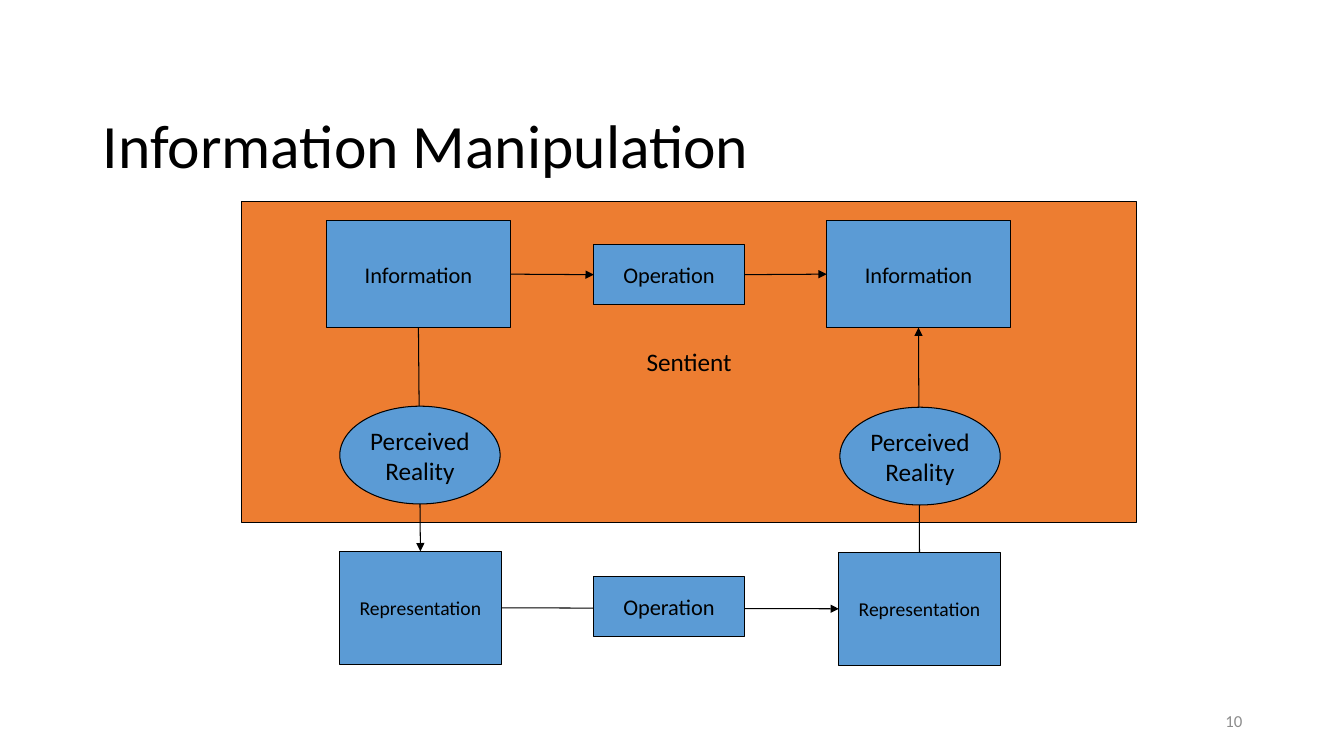
from lxml.etree import SubElement
from pptx import Presentation
from pptx.dml.color import RGBColor
from pptx.enum.shapes import MSO_CONNECTOR, MSO_SHAPE
from pptx.enum.text import MSO_ANCHOR, PP_ALIGN
from pptx.oxml.ns import qn
from pptx.util import Pt

PX = 9144  # 100 px to the inch
SLIDE_SIZE = (1333, 750)
FONT = "Calibri"
COLORS = {"panel": "ED7D31", "node": "5B9BD5", "ink": "000000", "number": "8C8C8C"}
TOP, BOTTOM, LEFT, RIGHT = 0, 2, 1, 3

TITLE = ("Information Manipulation", (92, 40, 1150, 145))
PAGE_NUMBER = ("10", (942, 695, 300, 40))

# kind: (preset, lines, font size, width, height, fill)
KINDS = {
    "sentient": (MSO_SHAPE.RECTANGLE, ["Sentient"], 18, 887, 318, "panel"),
    "information": (MSO_SHAPE.RECTANGLE, ["Information"], 16, 182, 106, "node"),
    "representation": (MSO_SHAPE.RECTANGLE, ["Representation"], 14, 160, 112, "node"),
    "reality": (MSO_SHAPE.OVAL, ["Perceived", "Reality"], 18, 159, 97, "node"),
    "operation": (MSO_SHAPE.RECTANGLE, ["Operation"], 16, 149, 59, "node"),
}

# name: (kind, left, top)
BACK_NODES = {
    "sentient": ("sentient", 240, 200),
    "representation in": ("representation", 337, 547),
    "information in": ("information", 324, 219),
    "representation out": ("representation", 832, 548),
    "information out": ("information", 820, 219),
}
FRONT_NODES = {
    "reality in": ("reality", 337, 403),
    "reality out": ("reality", 833, 404),
    "outer operation": ("operation", 589, 572),
    "inner operation": ("operation", 589, 243),
}

# (from node, side, to node, side); the long arrows pass behind the front nodes
LONG_ARROWS = [
    ("representation in", RIGHT, "representation out", LEFT),
    ("information in", BOTTOM, "representation in", TOP),
    ("representation out", TOP, "information out", BOTTOM),
]
SHORT_ARROWS = [
    ("information in", RIGHT, "inner operation", LEFT),
    ("inner operation", RIGHT, "information out", LEFT),
]


def rgb(name):
    return RGBColor.from_string(COLORS[name])


def emu(lengths):
    return [length * PX for length in lengths]


def write(shape, lines, size, color="ink", align=PP_ALIGN.CENTER, spacing=None, **frame_format):
    """Fill the shape with one paragraph per line; frame_format sets text frame attributes."""
    frame = shape.text_frame
    for name, value in {"vertical_anchor": MSO_ANCHOR.MIDDLE, **frame_format}.items():
        setattr(frame, name, value)
    for index, line in enumerate(lines):
        para = frame.add_paragraph() if index else frame.paragraphs[0]
        para.alignment = align
        para.line_spacing = spacing
        span = para.add_run()
        span.text = line
        for name, value in {"name": FONT, "size": Pt(size)}.items():
            setattr(span.font, name, value)
        span.font.color.rgb = rgb(color)


def outline(item):
    item.line.color.rgb = rgb("ink")
    item.line.width = Pt(0.75)


def add_nodes(page, layer):
    nodes = {}
    for name, (kind, left, top) in layer.items():
        preset, lines, size, width, height, fill = KINDS[kind]
        node = page.shapes.add_shape(preset, *emu((left, top, width, height)))
        node.shadow.inherit = False
        node.fill.solid()
        node.fill.fore_color.rgb = rgb(fill)
        outline(node)
        write(node, lines, size, word_wrap=False)
        nodes[name] = node
    return nodes


def add_arrows(page, nodes, arrows):
    for start, start_side, end, end_side in arrows:
        arrow = page.shapes.add_connector(MSO_CONNECTOR.STRAIGHT, 0, 0, 0, 0)
        arrow.begin_connect(nodes[start], start_side)
        arrow.end_connect(nodes[end], end_side)
        outline(arrow)
        SubElement(arrow.line._get_or_add_ln(), qn("a:tailEnd"), type="triangle")
        SubElement(arrow._element.spPr, qn("a:effectLst"))


def main():
    deck = Presentation()
    deck.slide_width, deck.slide_height = emu(SLIDE_SIZE)
    page = deck.slides.add_slide(deck.slide_layouts[6])

    nodes = add_nodes(page, BACK_NODES)
    add_arrows(page, nodes, LONG_ARROWS)
    nodes.update(add_nodes(page, FRONT_NODES))
    add_arrows(page, nodes, SHORT_ARROWS)

    text, place = TITLE
    write(page.shapes.add_textbox(*emu(place)), [text], 44, align=PP_ALIGN.LEFT,
          spacing=0.9, word_wrap=True, vertical_anchor=MSO_ANCHOR.BOTTOM)
    text, place = PAGE_NUMBER
    write(page.shapes.add_textbox(*emu(place)), [text], 12, "number", PP_ALIGN.RIGHT,
          word_wrap=True)

    deck.save("out.pptx")


if __name__ == "__main__":
    main()
